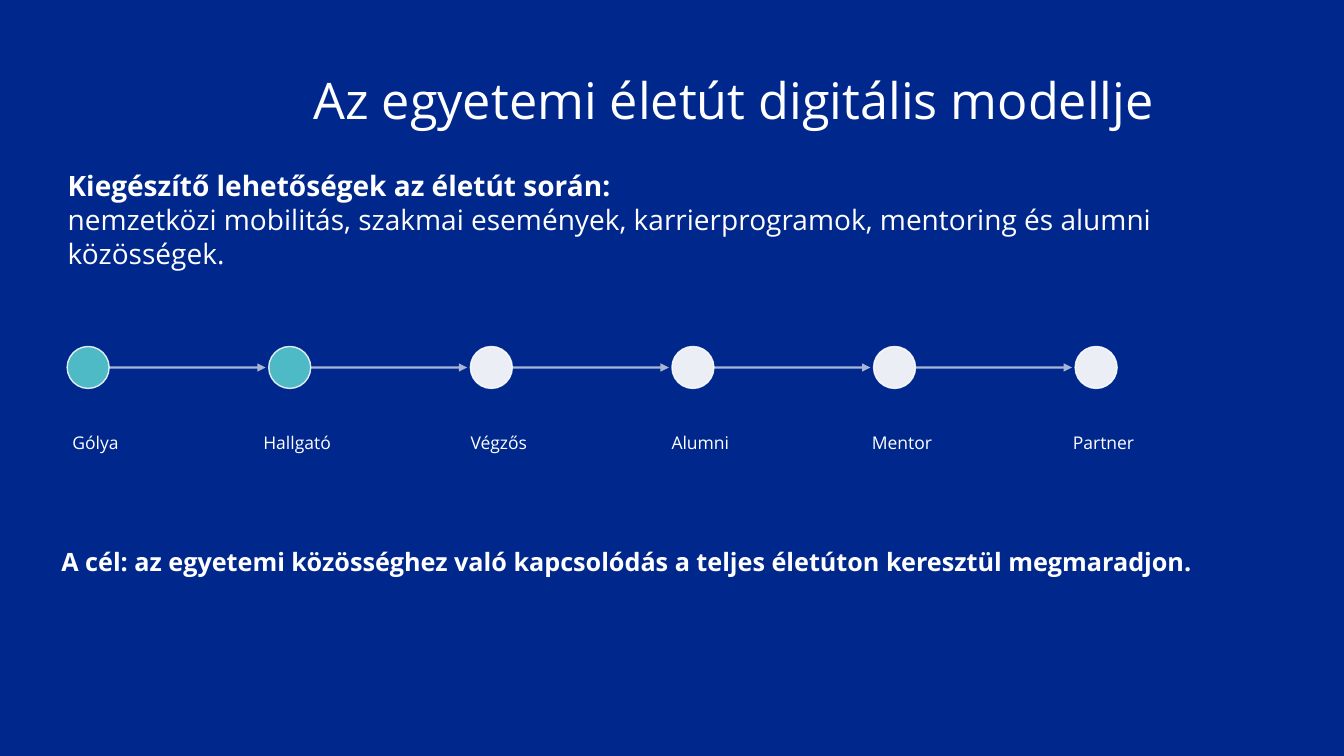
from lxml.etree import SubElement
from pptx import Presentation
from pptx.dml.color import RGBColor
from pptx.enum.shapes import MSO_CONNECTOR, MSO_SHAPE
from pptx.enum.text import MSO_ANCHOR, MSO_AUTO_SIZE, PP_ALIGN
from pptx.oxml.ns import qn
from pptx.util import Pt

PX = 9525  # EMU per px, 96 px to the inch
NAVY = RGBColor(0x00, 0x28, 0x8C)
TEAL = RGBColor(0x4D, 0xBA, 0xC6)
WHITE = RGBColor(0xFF, 0xFF, 0xFF)
FONT = "Open Sans"

STAGES = ["Gólya", "Hallgató", "Végzős", "Alumni", "Mentor", "Partner"]
DONE = 2  # stages shown in teal
LEFT, MID, STEP, DOT = 64, 350, 192, 40


def px(*nums):
    return [num * PX for num in nums]


def fade(props, percent):
    """Set the opacity of the solid fill held by props."""
    color = props.find(qn("a:solidFill"))[0]
    SubElement(color, qn("a:alpha"), val=str(percent * 1000))


def add_text(slide, area, lines, size, align=PP_ALIGN.LEFT):
    """Each line is a (text, bold) pair and makes one paragraph."""
    box = slide.shapes.add_textbox(*px(*area))
    frame = box.text_frame
    frame.word_wrap = True
    frame.auto_size = MSO_AUTO_SIZE.SHAPE_TO_FIT_TEXT
    for i, (text, bold) in enumerate(lines):
        para = frame.paragraphs[0] if i == 0 else frame.add_paragraph()
        para.alignment = align
        run = para.add_run()
        run.text = text
        run.font.name = FONT
        run.font.size = Pt(size)
        run.font.bold = bold
        run.font.color.rgb = WHITE
    return frame


def add_label(slide, left, text):
    frame = add_text(slide, (left, 393, 110, 56), [(text, False)], 12.5,
                     PP_ALIGN.CENTER)
    frame.auto_size = MSO_AUTO_SIZE.NONE
    frame.vertical_anchor = MSO_ANCHOR.MIDDLE
    frame.margin_left = frame.margin_right = 0
    frame.margin_top = frame.margin_bottom = 0


def add_dot(slide, left, done):
    dot = slide.shapes.add_shape(
        MSO_SHAPE.OVAL, *px(left, MID - DOT // 2, DOT, DOT))
    dot.shadow.inherit = False
    dot.fill.solid()
    dot.fill.fore_color.rgb = TEAL if done else WHITE
    if not done:
        fade(dot._element.spPr, 92)
    dot.line.color.rgb = WHITE
    dot.line.width = Pt(1)
    fade(dot.line._get_or_add_ln(), 85)


def add_arrow(slide, start, end):
    arrow = slide.shapes.add_connector(
        MSO_CONNECTOR.STRAIGHT, *px(start, MID, end, MID))
    arrow.line.color.rgb = WHITE
    arrow.line.width = Pt(1.5)
    edge = arrow.line._get_or_add_ln()
    fade(edge, 65)
    SubElement(edge, qn("a:tailEnd"), type="triangle")
    SubElement(arrow._element.spPr, qn("a:effectLst"))


def main():
    deck = Presentation()
    deck.slide_width, deck.slide_height = px(1280, 720)
    slide = deck.slides.add_slide(deck.slide_layouts[6])
    slide.background.fill.solid()
    slide.background.fill.fore_color.rgb = NAVY

    # Title and intro
    add_text(slide, (289, 61, 938, 68),
             [("Az egyetemi életút digitális modellje", False)], 36)
    add_text(slide, (55, 156, 1164, 107), [
        ("Kiegészítő lehetőségek az életút során:", True),
        ("nemzetközi mobilitás, szakmai események, karrierprogramok, "
         "mentoring és alumni közösségek.", False),
    ], 20)

    # Life path
    for i, stage in enumerate(STAGES):
        left = LEFT + i * STEP
        add_dot(slide, left, i < DONE)
        add_label(slide, left - 28, stage)
        if i < len(STAGES) - 1:
            add_arrow(slide, left + DOT, left + STEP - 3)

    # Goal
    add_text(slide, (-24, 516, 1242, 38), [
        ("A cél: az egyetemi közösséghez való kapcsolódás a teljes életúton "
         "keresztül megmaradjon.", True),
    ], 18, PP_ALIGN.CENTER)

    deck.save("out.pptx")


if __name__ == "__main__":
    main()
